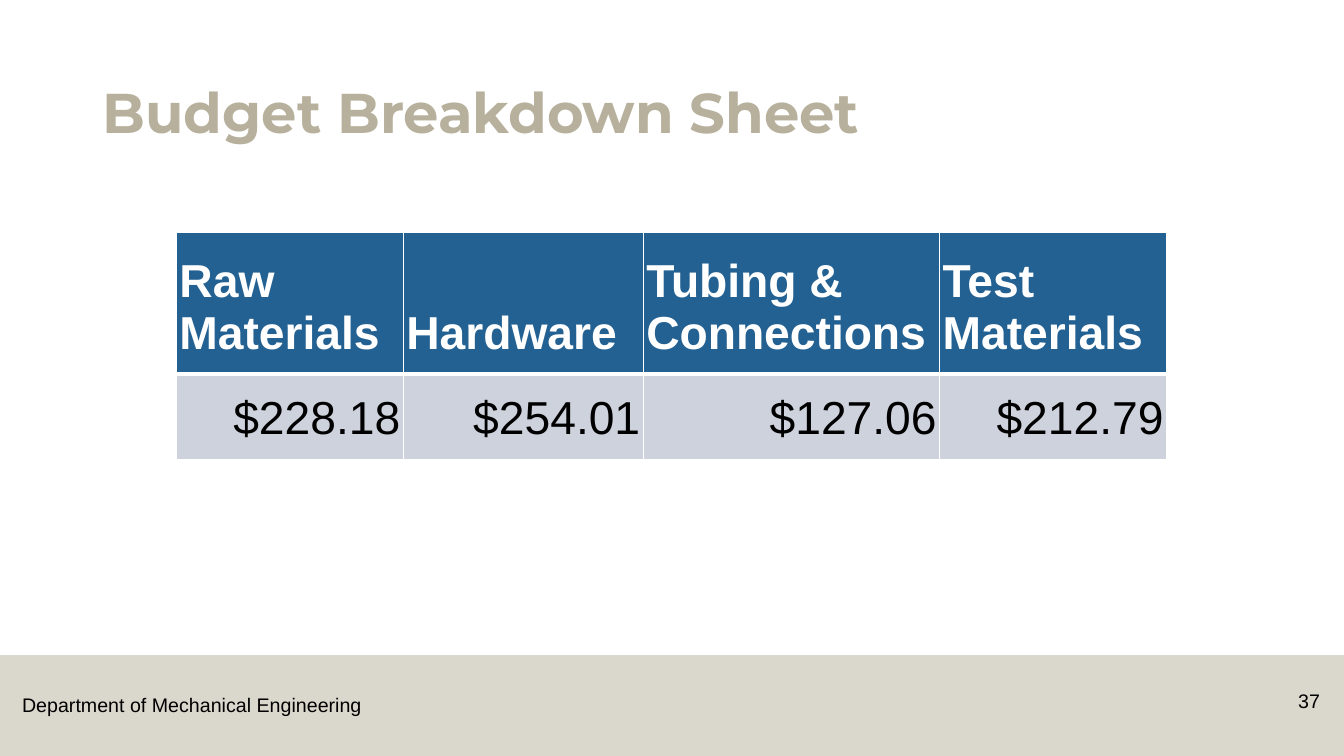
import pptx
import pptx.dml.color
import pptx.enum.shapes
import pptx.enum.text
import pptx.oxml
import pptx.oxml.ns
import pptx.util
from lxml import etree

PX = 9144
ALIGN = pptx.enum.text.PP_ALIGN
ANCHOR = pptx.enum.text.MSO_ANCHOR
BUDGET = [
    ("Raw Materials", "$228.18", 225),
    ("Hardware", "$254.01", 238),
    ("Tubing & Connections", "$127.06", 294),
    ("Test Materials", "$212.79", 225),
]
ROW_HEIGHTS = [140, 85]


def px(*lengths):
    return [pptx.util.Emu(n * PX) for n in lengths]


def rgb(color):
    return pptx.dml.color.RGBColor.from_string(color)


def set_font(p, size, color, name="Arial", bold=False):
    p.font.size = pptx.util.Pt(size)
    p.font.name = name
    p.font.bold = bold
    p.font.color.rgb = rgb(color)


def add_band(slide, box, color, opacity):
    sp = slide.shapes.add_shape(pptx.enum.shapes.MSO_SHAPE.RECTANGLE, *px(*box))
    sp.shadow.inherit = False
    sp.fill.solid()
    sp.fill.fore_color.rgb = rgb(color)
    sp.line.fill.background()
    clr = sp.fill._xPr.find(".//" + pptx.oxml.ns.qn("a:srgbClr"))
    etree.SubElement(clr, pptx.oxml.ns.qn("a:alpha"), val=str(opacity * 1000))


def add_text(slide, box, text, wrap=True, anchor=ANCHOR.TOP):
    tf = slide.shapes.add_textbox(*px(*box)).text_frame
    tf.word_wrap = wrap
    tf.vertical_anchor = anchor
    p = tf.paragraphs[0]
    p.text = text
    return p


def set_borders(cell, widths, color):
    tcPr = cell._tc.get_or_add_tcPr()
    for i, (side, width) in enumerate(zip("LRTB", widths)):
        ln = etree.Element(pptx.oxml.ns.qn(f"a:ln{side}"), w=str(pptx.util.Pt(width)))
        fill = etree.SubElement(ln, pptx.oxml.ns.qn("a:solidFill"))
        etree.SubElement(fill, pptx.oxml.ns.qn("a:srgbClr"), val=color)
        tcPr.insert(i, ln)


def fill_cell(cell, text, fill, color, bold, align, borders):
    cell.fill.solid()
    cell.fill.fore_color.rgb = rgb(fill)
    cell.vertical_anchor = ANCHOR.BOTTOM
    cell.margin_left, cell.margin_top, cell.margin_right, cell.margin_bottom = px(3, 3, 3, 15)
    p = cell.text_frame.paragraphs[0]
    p.text = text
    p.alignment = align
    set_font(p, 33, color, bold=bold)
    set_borders(cell, borders, "FFFFFF")


def add_budget_table(slide, left, top):
    widths = [width for _, _, width in BUDGET]
    box = px(left, top, sum(widths), sum(ROW_HEIGHTS))
    table = slide.shapes.add_table(len(ROW_HEIGHTS), len(BUDGET), *box).table
    for row, height in zip(table.rows, px(*ROW_HEIGHTS)):
        row.height = height
    for i, (item, cost, width) in enumerate(BUDGET):
        table.columns[i].width = px(width)[0]
        fill_cell(table.cell(0, i), item, "236192", "FFFFFF", True, ALIGN.LEFT, (1, 1, 1, 3))
        fill_cell(table.cell(1, i), cost, "CDD2DC", "000000", False, ALIGN.RIGHT, (1, 1, 3, 1))


def main():
    prs = pptx.Presentation()
    prs.slide_width, prs.slide_height = px(1333, 750)
    slide = prs.slides.add_slide(prs.slide_layouts[6])

    add_band(slide, (0, 650, 1333, 100), "B7B09C", 50)
    p = add_text(slide, (12, 683, 359, 34), "Department of Mechanical Engineering", wrap=False)
    set_font(p, 14, "000000")
    p = add_text(slide, (1242, 679, 77, 40), "37")
    p.alignment = ALIGN.RIGHT
    p.space_after = pptx.util.Pt(6)
    set_font(p, 14, "000000")
    p = add_text(slide, (92, 40, 1150, 109), "Budget Breakdown Sheet", anchor=ANCHOR.BOTTOM)
    p.line_spacing = 0.9
    set_font(p, 40, "B7B09C", "Montserrat", True)
    add_budget_table(slide, 175, 231)

    prs.save("out.pptx")


if __name__ == "__main__":
    main()
